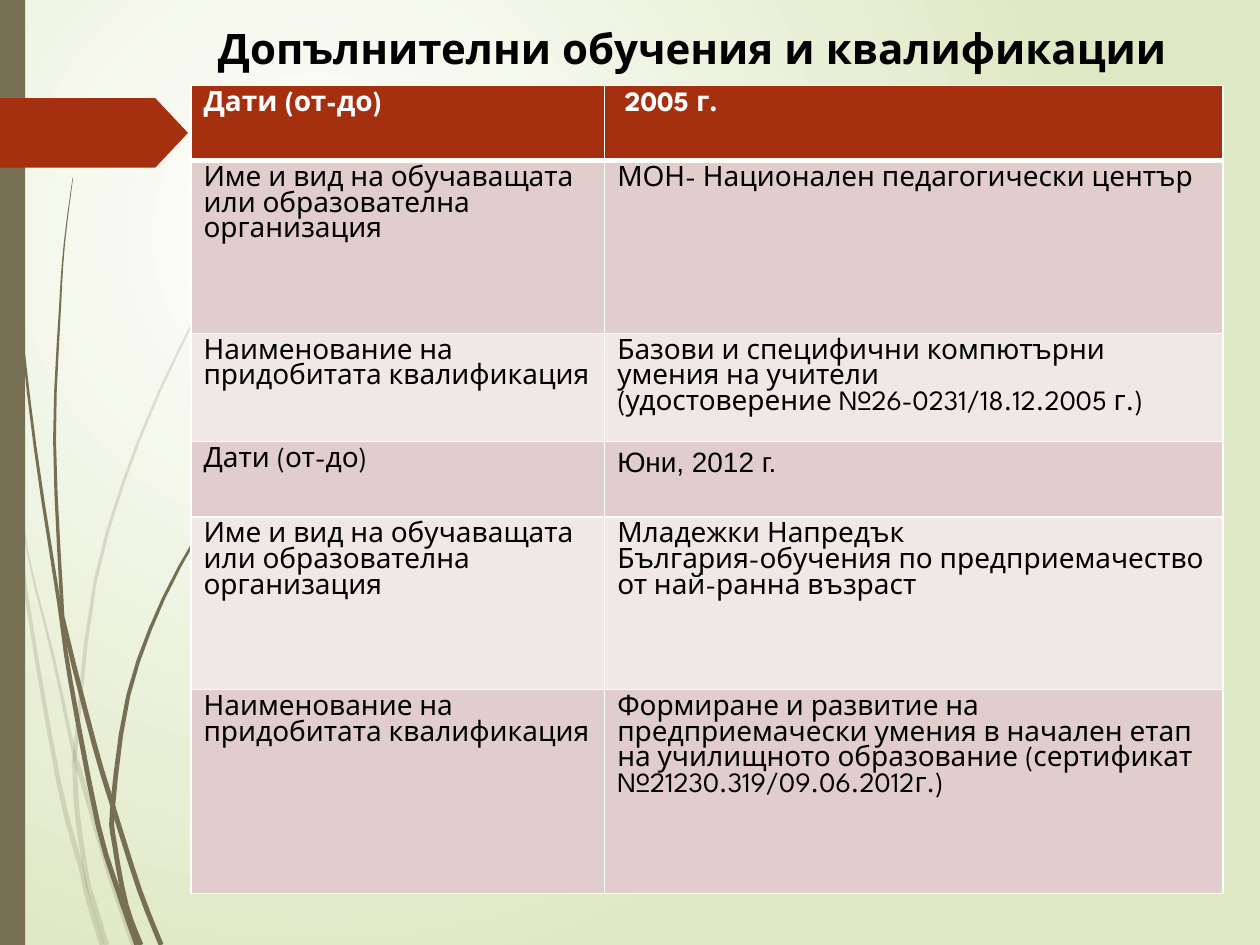
from math import hypot

from lxml.etree import SubElement
from pptx import Presentation
from pptx.dml.color import RGBColor
from pptx.enum.shapes import MSO_SHAPE as Preset
from pptx.enum.text import MSO_ANCHOR as Anchor, PP_ALIGN as Align
from pptx.oxml.ns import qn
from pptx.util import Cm, Pt

COLORS = {"white": "FFFFFF", "black": "000000", "olive": "766F54", "rust": "A53010",
          "rose": "E1CDCC", "pale": "F0E8E7", "green": "DFE8C4"}
FONT = "League Spartan"
PAGE_BOX = (0, 0, 25.4, 19.05)  # left, top, width, height in cm

# Grass stems: blades from tip to root, each a list of centre points in cm;
# a blade starts where the one before it ends
FADED_STEMS = [
    [[(0, 7.2), (0.2, 8.89)],
     [(0.28, 9.55), (0.52, 11.91), (1.18, 15.75), (1.63, 17.48), (1.78, 18.14)],
     [(2.06, 19.05)]],
    [[(0.25, 8.8), (0.55, 11.1), (1.07, 13.23), (1.49, 15.18)],
     [(1.6, 15.52), (2.2, 17.6), (2.69, 19.05)]],
    [[(5.51, 3.89), (4.74, 5.02), (4.03, 6.21), (2.81, 8.85), (1.92, 11.72), (1.52, 15.14)],
     [(1.51, 15.49), (1.56, 16.41), (1.75, 17.7), (1.85, 18.06)],
     [(2.15, 19.05)]],
]
SOLID_STEMS = [
    [[(0.05, 0), (0.13, 2.79), (0.36, 5.92), (0.71, 9.02), (1.19, 12.16)],
     [(1.42, 13.72), (1.98, 16.64), (2.39, 17.98), (2.51, 18.34)],
     [(2.76, 19.05)]],
    [[(1.47, 3.58), (1.3, 4.9), (1.21, 6.22), (1.1, 8.86), (1.24, 11.99)],
     [(1.32, 12.7), (1.9, 15), (2.3, 16.33)],
     [(2.82, 17.96), (3.25, 19.05)]],
    [[(5.49, 8.74), (4.85, 9.49), (4.28, 10.3), (3.3, 12.06), (2.59, 14.01), (2.27, 16.28)],
     [(2.31, 17.02), (2.54, 18.24)],
     [(2.84, 19.05)]],
]

DATES = "Дати (от-до)"
SCHOOL = "Име и вид на обучаващата или образователна организация"
DEGREE = "Наименование на придобитата квалификация"
ROWS = [  # height in cm, label, value
    (1.52, DATES, " 2005 г."),
    (3.48, SCHOOL, "МОН- Национален педагогически център"),
    (2.18, DEGREE, "Базови и специфични компютърни умения на учители\n"
                   "(удостоверение №26-0231/18.12.2005 г.)"),
    (1.52, DATES, "Юни, 2012 г."),
    (3.48, SCHOOL, "Младежки Напредък\n"
                   "България-обучения по предприемачество от най-ранна възраст"),
    (4.11, DEGREE, "Формиране и развитие на предприемачески умения в начален етап на "
                   "училищното образование (сертификат №21230.319/09.06.2012г.)"),
]


def rgb(name):
    return RGBColor.from_string(COLORS[name])


def write(frame, text, size=16, color="black", bold=False, font=FONT, align=Align.LEFT):
    frame.word_wrap = True
    for index, line in enumerate(text.split("\n")):
        para = frame.add_paragraph() if index else frame.paragraphs[0]
        para.alignment = align
        span = para.add_run()
        span.text = line
        span.font.name, span.font.size, span.font.bold = font, Pt(size), bold
        span.font.color.rgb = rgb(color)


def paint(shape, color, alpha=None):
    shape.shadow.inherit = False
    shape.fill.solid()
    shape.fill.fore_color.rgb = rgb(color)
    shape.line.fill.background()
    if alpha:
        tone = shape._element.spPr.find(".//" + qn("a:srgbClr"))
        SubElement(tone, qn("a:alpha"), val=str(alpha * 1000))


def smooth(knots, steps):
    """Catmull-Rom curve through the knots."""
    padded = [knots[0], *knots, knots[-1]]
    curve = []
    for quad in zip(padded, padded[1:], padded[2:], padded[3:]):
        for step in range(steps):
            t = step / steps
            curve.append(tuple(
                (2 * b + (c - a) * t + (2 * a - 5 * b + 4 * c - d) * t ** 2
                 + (3 * b - a - 3 * c + d) * t ** 3) / 2
                for a, b, c, d in zip(*quad)))
    return curve + [knots[-1]]


def add_stem(page, box, blades, alpha=None, tip=0.01, root=0.1, steps=3):
    """A ribbon of blades that widens from its tip to its root."""
    left, top = box[:2]
    curve = smooth(sum(blades, []), steps)
    last = len(curve) - 1
    sides = [], []
    for index, (x, y) in enumerate(curve):
        (x0, y0), (x1, y1) = curve[max(index - 1, 0)], curve[min(index + 1, last)]
        length = hypot(x1 - x0, y1 - y0)
        half = (tip + (root - tip) * min(1, 1.6 * index / last)) / 2
        dx, dy = (y0 - y1) / length * half, (x1 - x0) / length * half
        for side, sign in zip(sides, (1, -1)):
            side.append((Cm(left + x + sign * dx), Cm(top + y + sign * dy)))
    start, count = 0, 0
    for blade in blades:
        count += len(blade)
        end = (count - 1) * steps
        near, far = (side[start:end + 1] for side in sides)
        outline = near + far[::-1]
        builder = page.shapes.build_freeform(*outline[0])
        builder.add_line_segments(outline[1:], close=True)
        paint(builder.convert_to_shape(), "olive", alpha)
        start = end


def add_background(page):
    fill = page.background.fill
    fill.gradient()
    for stop, color in zip(fill.gradient_stops, ("white", "green")):
        stop.color.rgb = rgb(color)
    gradient = page._element.find(".//" + qn("a:gradFill"))
    linear = gradient.find(qn("a:lin"))
    if linear is not None:
        gradient.remove(linear)
    circle = SubElement(gradient, qn("a:path"), {"path": "circle"})
    SubElement(circle, qn("a:fillToRect"), l="50000", t="50000", r="100000", b="100000")


def add_decoration(page, box):
    left, top, _, height = box
    for blades in FADED_STEMS:
        add_stem(page, box, blades, alpha=20)
    for blades in SOLID_STEMS:
        add_stem(page, box, blades)
    # Side bar and arrow tab
    bar = page.shapes.add_shape(Preset.RECTANGLE, Cm(left), Cm(top), Cm(0.51), Cm(height))
    paint(bar, "olive")
    tab = page.shapes.add_shape(Preset.PENTAGON, Cm(left), Cm(top + 1.98), Cm(3.79), Cm(1.4))
    tab.adjustments[0] = 0.47
    paint(tab, "rust")


def add_title(page, box):
    frame = page.shapes.add_textbox(*map(Cm, box)).text_frame
    frame.vertical_anchor = Anchor.MIDDLE
    frame.margin_bottom = Cm(0.25)
    write(frame, "Допълнителни обучения и квалификации", size=24, bold=True, align=Align.CENTER)


def set_borders(cell, **widths):
    props = cell._tc.get_or_add_tcPr()
    for index, (side, width) in enumerate(widths.items()):
        line = props.makeelement(qn("a:ln" + side), {"w": str(Pt(width))})
        SubElement(SubElement(line, qn("a:solidFill")), qn("a:srgbClr"), val=COLORS["white"])
        props.insert(index, line)


def add_training_table(page, box):
    table = page.shapes.add_table(len(ROWS), 2, *map(Cm, box)).table
    for column, width in zip(table.columns, (8.34, box[2] - 8.34)):
        column.width = Cm(width)
    for index, (height, *texts) in enumerate(ROWS):
        table.rows[index].height = Cm(height)
        header = index == 0
        for cell, text in zip(table.rows[index].cells, texts):
            cell.margin_bottom = 0
            cell.fill.solid()
            cell.fill.fore_color.rgb = rgb("rust" if header else ("pale", "rose")[index % 2])
            set_borders(cell, L=1, R=1, T=3 if index == 1 else 1, B=3 if header else 1)
            write(cell.text_frame, text, bold=header, color="white" if header else "black",
                  font="Arial" if text.startswith("Юни") else FONT)


def main():
    deck = Presentation()
    deck.slide_width, deck.slide_height = map(Cm, PAGE_BOX[2:])
    page = deck.slides.add_slide(deck.slide_layouts[6])
    add_background(page)
    add_decoration(page, PAGE_BOX)
    add_title(page, (3.86, 0.33, 20.19, 1.4))
    add_training_table(page, (3.85, 1.72, 20.8, sum(row[0] for row in ROWS)))
    deck.save("out.pptx")


if __name__ == "__main__":
    main()
